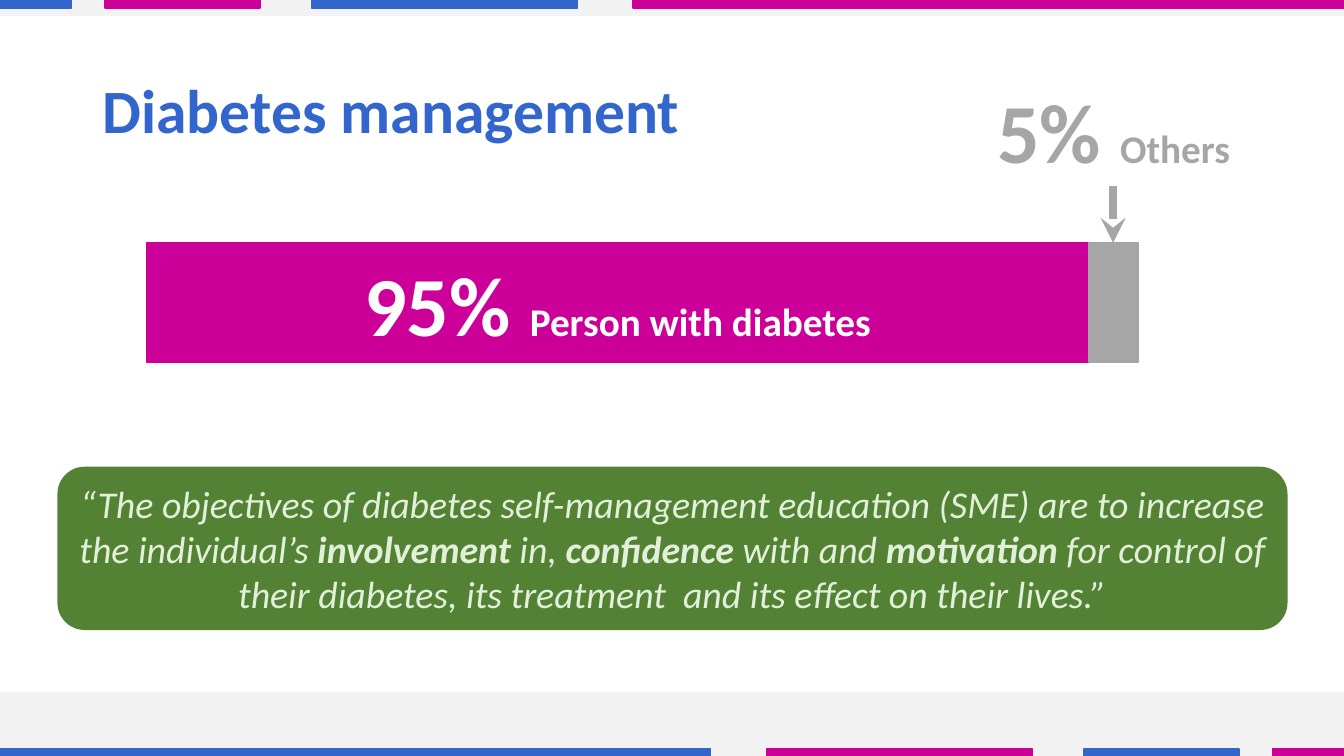
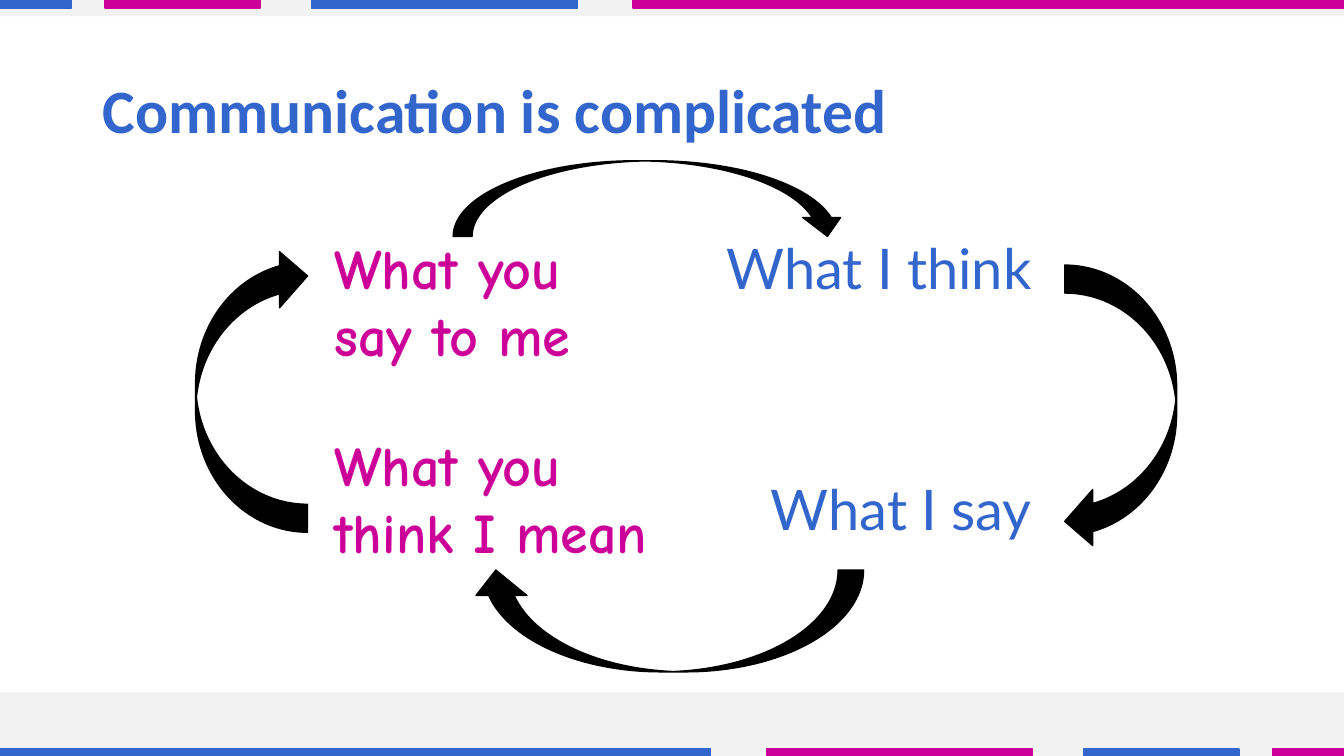
"""Build two slides on diabetes management and communication."""
from typing import NamedTuple

from pptx import Presentation
from pptx.dml.color import RGBColor
from pptx.enum.shapes import MSO_CONNECTOR, MSO_SHAPE
from pptx.enum.text import MSO_ANCHOR, MSO_AUTO_SIZE, PP_ALIGN
from pptx.oxml.ns import qn
from pptx.util import Emu, Pt
from lxml import etree

RECT = MSO_SHAPE.RECTANGLE
ROUNDED = MSO_SHAPE.ROUNDED_RECTANGLE
CURVED_ARROW = MSO_SHAPE.CURVED_LEFT_ARROW
STRAIGHT = MSO_CONNECTOR.STRAIGHT
TOP, MIDDLE = MSO_ANCHOR.TOP, MSO_ANCHOR.MIDDLE
LEFT, CENTER, RIGHT = PP_ALIGN.LEFT, PP_ALIGN.CENTER, PP_ALIGN.RIGHT
FIT_SHAPE = MSO_AUTO_SIZE.SHAPE_TO_FIT_TEXT

EMU_PER_PX = 9144
SLIDE_W, SLIDE_H = 1333, 750

BLUE, PINK, GREY = "3366CC", "CC0099", "A6A6A6"
PALE, WHITE, BLACK = "F2F2F2", "FFFFFF", "000000"
GREEN, MINT = "548235", "E2F0D9"


class Box(NamedTuple):
    left: int
    top: int
    width: int
    height: int


class Strip(NamedTuple):
    left: int
    width: int
    footer_color: str
    header_color: str


class Style(NamedTuple):
    size: int
    color: str
    font: str = "Calibri"
    bold: bool = False
    italic: bool = False
    align: PP_ALIGN = LEFT


class Run(NamedTuple):
    text: str
    size: int | None = None
    bold: bool | None = None


class Phrase(NamedTuple):
    text: str
    box: Box
    style: Style
    wrap: bool


class Turn(NamedTuple):
    box: Box
    rotation: int


TITLE = Style(44, BLUE, bold=True)
YOU = Style(40, PINK, "Comic Neue", bold=True)
ME = Style(40, BLUE, "Lato", align=RIGHT)
QUOTE = Style(27, MINT, italic=True, align=CENTER)
SHARE_SIZE, LABEL_SIZE = 60, 28

STRIP_H = 8
STRIPS = [
    Strip(0, 705, BLUE, PINK),
    Strip(760, 264, PINK, BLUE),
    Strip(1075, 154, BLUE, PINK),
    Strip(1262, 71, PINK, BLUE),
]

QUOTE_RUNS = [
    Run("“The objectives of diabetes self-management education (SME) "
        "are to increase the individual’s "),
    Run("involvement ", bold=True),
    Run("in, "),
    Run("confidence ", bold=True),
    Run("with and "),
    Run("motivation", bold=True),
    Run(" for control of their diabetes, its treatment  and its effect "
        "on their lives.”"),
]

PHRASES = [
    Phrase("What you say to me", Box(322, 227, 323, 145), YOU, True),
    Phrase("What I think", Box(705, 227, 328, 77), ME, False),
    Phrase("What you think I mean", Box(322, 422, 345, 145), YOU, True),
    Phrase("What I say", Box(745, 466, 288, 77), ME, False),
]

TURNS = [
    Turn(Box(1056, 263, 111, 282), 0),
    Turn(Box(611, 421, 101, 390), 90),
    Turn(Box(194, 246, 111, 282), 180),
    Turn(Box(607, 2, 75, 390), 270),
]


def px(length: int) -> Emu:
    return Emu(length * EMU_PER_PX)


def rgb(color: str) -> RGBColor:
    return RGBColor.from_string(color)


def add_block(slide, box: Box, fill: str, outlined: bool = True, kind=RECT):
    block = slide.shapes.add_shape(kind, *map(px, box))
    block.shadow.inherit = False
    block.fill.solid()
    block.fill.fore_color.rgb = rgb(fill)
    if outlined:
        block.line.color.rgb = rgb(fill)
        block.line.width = Pt(1)
    else:
        block.line.fill.background()
    return block


def write(shape, runs: list[Run], style: Style, anchor=TOP, wrap: bool = True):
    frame = shape.text_frame
    frame.word_wrap = wrap
    frame.vertical_anchor = anchor
    paragraph = frame.paragraphs[0]
    paragraph.alignment = style.align
    font = paragraph.font
    font.name, font.size = style.font, Pt(style.size)
    font.bold, font.italic = style.bold, style.italic
    font.color.rgb = rgb(style.color)
    for item in runs:
        run = paragraph.add_run()
        run.text = item.text
        if item.size:
            run.font.size = Pt(item.size)
        if item.bold is not None:
            run.font.bold = item.bold
    return paragraph


def add_text(slide, box: Box, runs: list[Run], style: Style, wrap: bool):
    textbox = slide.shapes.add_textbox(*map(px, box))
    write(textbox, runs, style, wrap=wrap)
    textbox.text_frame.auto_size = FIT_SHAPE


def add_bands(slide) -> None:
    add_block(slide, Box(-5, 687, 1348, 63), PALE, outlined=False)
    add_block(slide, Box(-6, 0, 1348, 16), PALE, outlined=False)
    for strip in STRIPS:
        mirrored = SLIDE_W - strip.left - strip.width
        add_block(slide, Box(strip.left, 743, strip.width, STRIP_H),
                  strip.footer_color)
        add_block(slide, Box(mirrored, 0, strip.width, STRIP_H),
                  strip.header_color)


def start_slide(deck, title: str):
    slide = deck.slides.add_slide(deck.slide_layouts[6])
    add_bands(slide)
    heading = slide.shapes.add_textbox(*map(px, Box(92, 40, 1150, 145)))
    write(heading, [Run(title)], TITLE, MIDDLE).line_spacing = 0.9
    return slide


def add_pointer(slide, x: int, tip: int, tail: int) -> None:
    pointer = slide.shapes.add_connector(
        STRAIGHT, px(x), px(tip), px(x), px(tail))
    pointer.line.color.rgb = rgb(GREY)
    pointer.line.width = Pt(6)
    head = etree.SubElement(pointer.line._get_or_add_ln(), qn("a:headEnd"))
    head.set("type", "stealth")
    etree.SubElement(pointer._element.spPr, qn("a:effectLst"))


def share_runs(share: str, label: str) -> list[Run]:
    return [Run(f"{share} ", SHARE_SIZE), Run(label, LABEL_SIZE)]


def build_management(deck) -> None:
    slide = start_slide(deck, "Diabetes management")
    share_style = Style(SHARE_SIZE, WHITE, bold=True, align=CENTER)
    person = add_block(slide, Box(145, 241, 935, 118), PINK)
    write(person, share_runs("95%", "Person with diabetes"),
          share_style, MIDDLE)
    add_block(slide, Box(1080, 241, 49, 118), GREY)
    add_text(slide, Box(978, 74, 253, 111), share_runs("5%", "Others"),
             share_style._replace(color=GREY), wrap=False)
    add_pointer(slide, 1104, 241, 185)
    quote = add_block(slide, Box(57, 463, 1220, 162), GREEN,
                      outlined=False, kind=ROUNDED)
    write(quote, QUOTE_RUNS, QUOTE, MIDDLE)


def build_communication(deck) -> None:
    slide = start_slide(deck, "Communication is complicated")
    for phrase in PHRASES:
        add_text(slide, phrase.box, [Run(phrase.text)], phrase.style,
                 phrase.wrap)
    for turn in TURNS:
        arrow = add_block(slide, turn.box, BLACK, kind=CURVED_ARROW)
        arrow.rotation = turn.rotation


def main() -> None:
    deck = Presentation()
    deck.slide_width, deck.slide_height = px(SLIDE_W), px(SLIDE_H)
    build_management(deck)
    build_communication(deck)
    deck.save("out.pptx")


if __name__ == "__main__":
    main()
